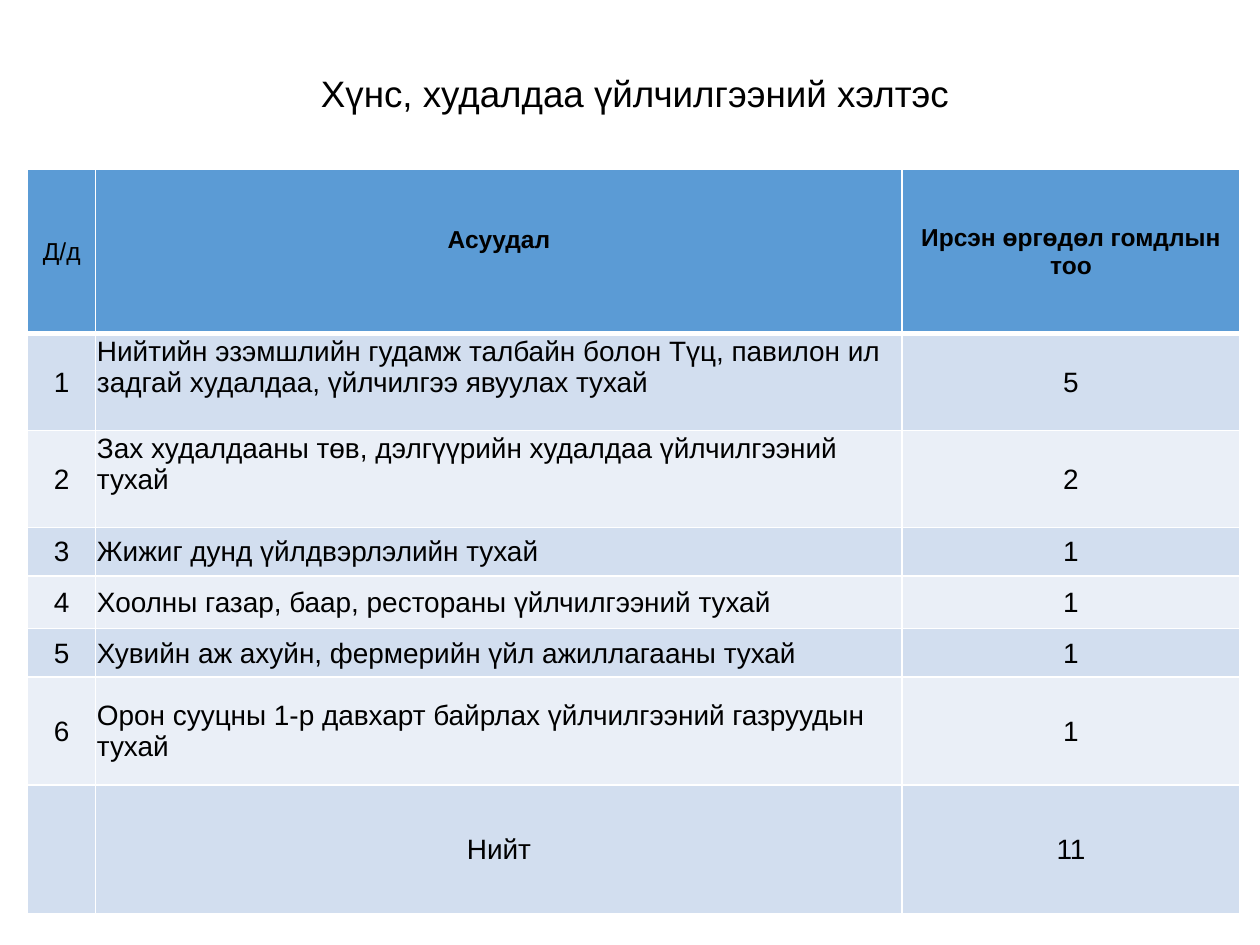
"""Build a slide with a table of complaints by subject."""
from dataclasses import dataclass

from lxml import etree
from pptx import Presentation
from pptx import util as u
from pptx.dml.color import RGBColor
from pptx.enum import text as t
from pptx.oxml.ns import qn

WIDE, HIGH = u.Inches(10), u.Inches(7.5)
BLACK = RGBColor(0, 0, 0)
WHITE = RGBColor(255, 255, 255)
HEAD = RGBColor(0x5B, 0x9B, 0xD5)
BANDS = (RGBColor(0xEA, 0xEF, 0xF7), RGBColor(0xD2, 0xDE, 0xEF))
FONT = "Arial"
MID, LEFT = t.PP_ALIGN.CENTER, t.PP_ALIGN.LEFT
COLS = (5.4, 64, 26.8)


@dataclass
class Row:
    """One table row: height in percent of the slide, texts and lift of the subject."""
    tall: float
    texts: tuple[str, str, str]
    lift: float = 0
    align: t.PP_ALIGN = LEFT


ROWS = (
    Row(17.4, ("Д/д", "Асуудал", "Ирсэн өргөдөл гомдлын тоо"), 2.6, MID),
    Row(10.27, ("1", "Нийтийн эзэмшлийн гудамж талбайн болон Түц, павилон ил "
                "задгай худалдаа, үйлчилгээ явуулах тухай", "5"), 3.2),
    Row(10.27, ("2", "Зах худалдааны төв, дэлгүүрийн худалдаа үйлчилгээний тухай",
                "2"), 3.2),
    Row(5.1, ("3", "Жижиг дунд үйлдвэрлэлийн тухай", "1")),
    Row(5.6, ("4", "Хоолны газар, баар, рестораны үйлчилгээний тухай", "1")),
    Row(5.1, ("5", "Хувийн аж ахуйн, фермерийн үйл ажиллагааны тухай", "1")),
    Row(11.47, ("6", "Орон сууцны 1-р давхарт байрлах үйлчилгээний газруудын тухай",
                "1")),
    Row(13.6, ("", "Нийт", "11"), align=MID),
)


def across(part: float) -> int:
    """Turn a percentage of the slide width into a length."""
    return round(WIDE * part / 100)


def down(part: float) -> int:
    """Turn a percentage of the slide height into a length."""
    return round(HIGH * part / 100)


def style(para, size: float, align: t.PP_ALIGN, bold: bool = False) -> None:
    """Format a paragraph and its runs."""
    para.alignment = align
    for run in para.runs:
        font = run.font
        font.name, font.size, font.bold = FONT, u.Pt(size), bold
        font.color.rgb = BLACK


def edge(cell, side: str, width: float) -> None:
    """Give one side of a cell a white border."""
    line = etree.SubElement(cell._tc.get_or_add_tcPr(), qn(f"a:ln{side}"),
                            w=str(u.Pt(width)))
    fill = etree.SubElement(line, qn("a:solidFill"))
    etree.SubElement(fill, qn("a:srgbClr"), val=str(WHITE))


def add_title(slide, words: str) -> None:
    """Place and format the title."""
    title = slide.shapes.title
    title.left, title.top = across(1.4), down(6.13)
    title.width, title.height = across(95.7), down(8)
    frame = title.text_frame
    frame.text = words
    frame.word_wrap = True
    frame.auto_size = t.MSO_AUTO_SIZE.NONE
    frame.vertical_anchor = t.MSO_ANCHOR.MIDDLE
    frame.margin_left = across(3.3)
    para = frame.paragraphs[0]
    para.line_spacing = 0.9
    style(para, 21, MID)


def fill_cell(cell, row: Row, line: int, col: int) -> None:
    """Write, colour and border one cell."""
    top = line == 0
    for side in "LRTB":
        thick = (top and side == "B") or (line == 1 and side == "T")
        edge(cell, side, 3 if thick else 1)
    cell.fill.solid()
    cell.fill.fore_color.rgb = HEAD if top else BANDS[line % 2]
    cell.vertical_anchor = t.MSO_ANCHOR.MIDDLE
    cell.margin_left = cell.margin_right = cell.margin_top = across(0.1)
    cell.margin_bottom = down(row.lift if col == 1 else 0)
    cell.text_frame.text = row.texts[col]
    style(cell.text_frame.paragraphs[0], 14 if top else 16,
          row.align if col == 1 else MID, top and col > 0)


def add_grid(slide) -> None:
    """Draw the table."""
    tall = sum(row.tall for row in ROWS)
    grid = slide.shapes.add_table(len(ROWS), len(COLS), across(2.2), down(17.9),
                                  across(sum(COLS)), down(tall)).table
    for col, part in zip(grid.columns, COLS):
        col.width = across(part)
    for line, row in enumerate(ROWS):
        grid.rows[line].height = down(row.tall)
        for col in range(len(COLS)):
            fill_cell(grid.cell(line, col), row, line, col)


def main() -> None:
    """Build and save the slide."""
    deck = Presentation()
    deck.slide_width, deck.slide_height = WIDE, HIGH
    slide = deck.slides.add_slide(deck.slide_layouts[5])
    add_title(slide, "Хүнс, худалдаа үйлчилгээний хэлтэс")
    add_grid(slide)
    deck.save("out.pptx")


if __name__ == "__main__":
    main()
